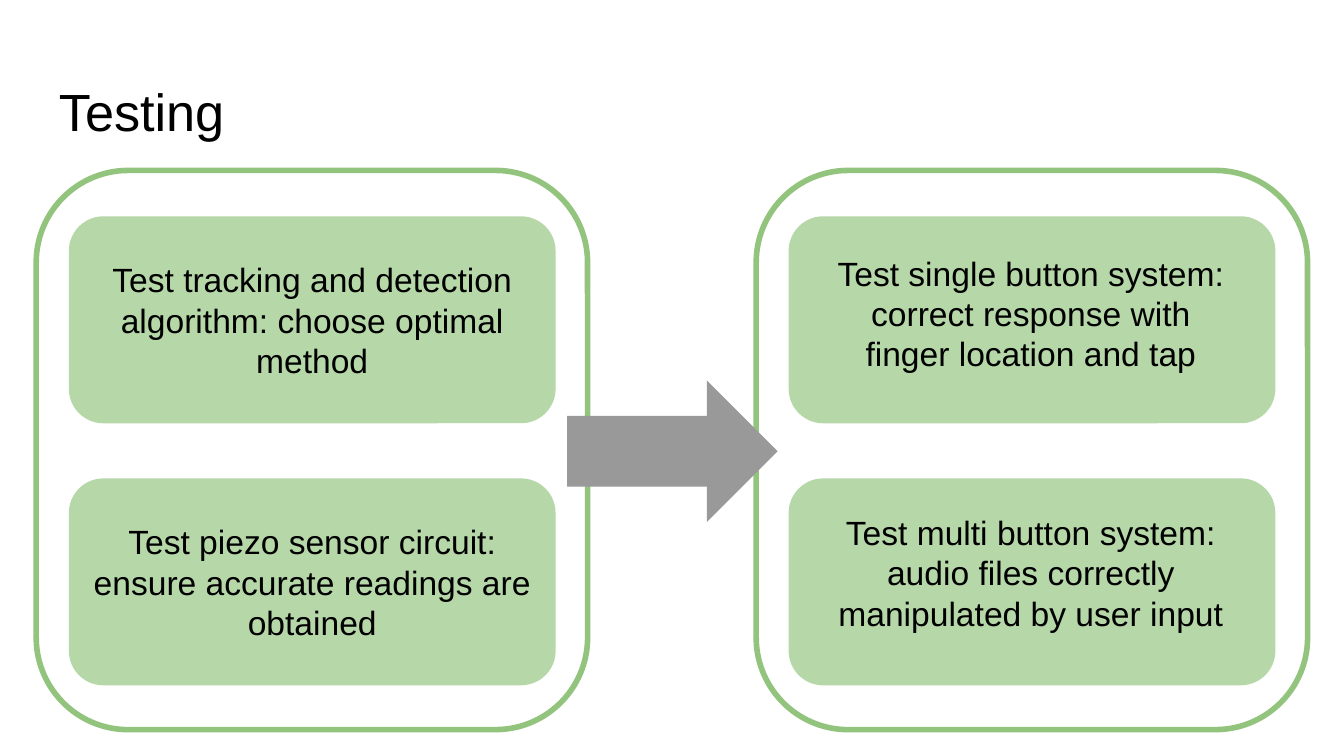
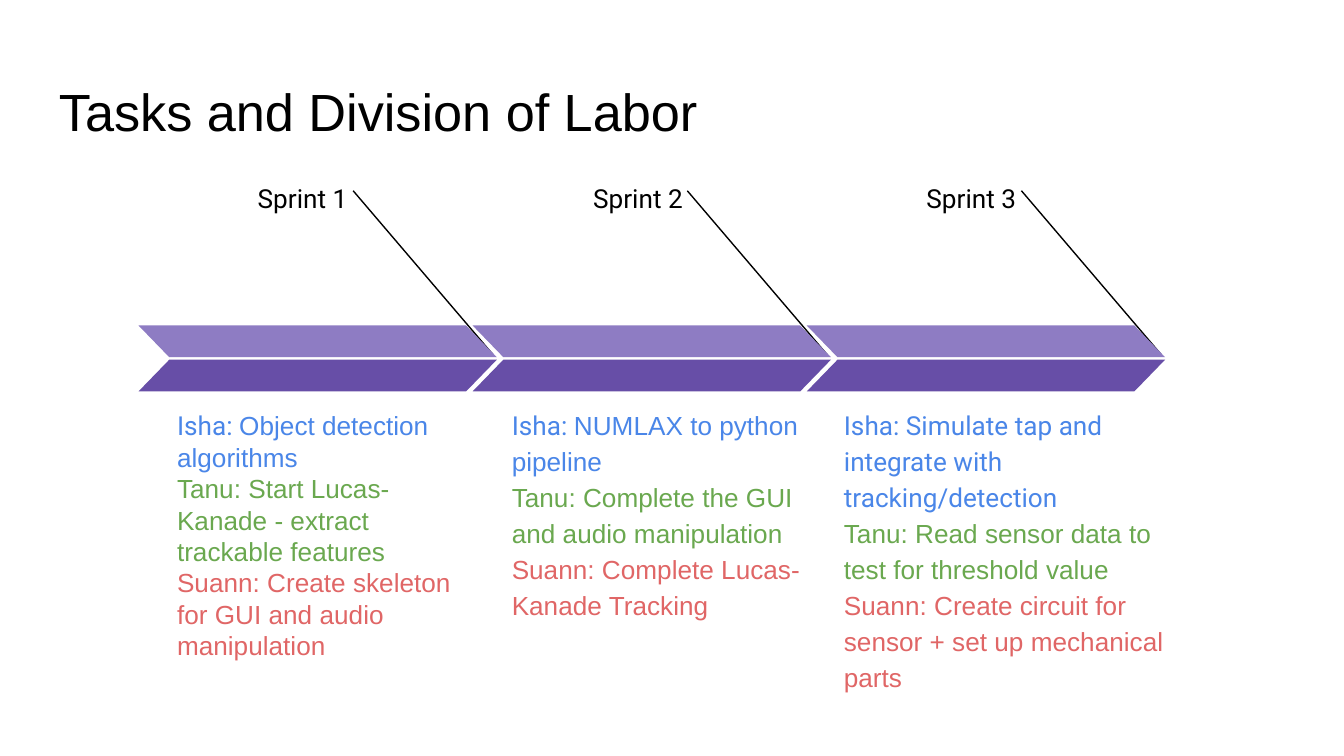
import pptx
import pptx.util
import pptx.dml.color
import pptx.enum.shapes
import pptx.enum.text
import pptx.oxml.ns
import lxml.etree

Pt = pptx.util.Pt
RGB = pptx.dml.color.RGBColor
SHAPE = pptx.enum.shapes.MSO_SHAPE
ALIGN = pptx.enum.text.PP_ALIGN
ANCHOR = pptx.enum.text.MSO_ANCHOR

BLACK = RGB(0x00, 0x00, 0x00)
GREEN = RGB(0x93, 0xC4, 0x7D)
PALE = RGB(0xB6, 0xD7, 0xA8)
GRAY = RGB(0x99, 0x99, 0x99)
LILAC = RGB(0x8E, 0x7C, 0xC3)
PURPLE = RGB(0x67, 0x4E, 0xA7)
BLUE = RGB(0x4A, 0x86, 0xE8)
LEAF = RGB(0x6A, 0xA8, 0x4F)
RED = RGB(0xE0, 0x66, 0x66)

SANS = "Arial"
ROBOTO = "Roboto"
INSET = 7.2


def write(shape, paras, size=18, font=SANS, color=BLACK, align=ALIGN.LEFT,
          anchor=ANCHOR.TOP, space=None, after=None):
    """Fill a shape with paragraphs, each a string or a list of (text, font, color)."""
    frame = shape.text_frame
    frame.word_wrap = True
    frame.vertical_anchor = anchor
    frame.margin_left = frame.margin_right = Pt(INSET)
    frame.margin_top = frame.margin_bottom = Pt(INSET)
    for i, item in enumerate(paras):
        para = frame.add_paragraph() if i else frame.paragraphs[0]
        para.alignment = align
        if space:
            para.line_spacing = space
        if after:
            para.space_after = Pt(after)
        runs = [(item, font, color)] if isinstance(item, str) else item
        for text, face, tint in runs:
            run = para.add_run()
            run.text = text
            run.font.size = Pt(size)
            run.font.name = face
            run.font.color.rgb = tint


class Deck:
    """Holds the deck's style and the slide being built."""

    def __init__(self):
        self.prs = pptx.Presentation()
        self.prs.slide_width = Pt(720)
        self.prs.slide_height = Pt(405)
        self.slide = None

    def page(self, title):
        self.slide = self.prs.slides.add_slide(self.prs.slide_layouts[6])
        self.text(24.5, 35.4, 671, 45.1, [title], size=28)

    def text(self, x, y, w, h, paras, **style):
        box = self.slide.shapes.add_textbox(Pt(x), Pt(y), Pt(w), Pt(h))
        write(box, paras, **style)

    def shape(self, kind, x, y, w, h, fill=None, line=None, adjust=(), flip=False):
        shape = self.slide.shapes.add_shape(kind, Pt(x), Pt(y), Pt(w), Pt(h))
        shape.shadow.inherit = False
        for i, value in enumerate(adjust):
            shape.adjustments[i] = value
        if fill is None:
            shape.fill.background()
        else:
            shape.fill.solid()
            shape.fill.fore_color.rgb = fill
        if line is None:
            shape.line.fill.background()
        else:
            shape.line.color.rgb = line
            shape.line.width = Pt(3)
        if flip:
            shape.element.spPr.find(pptx.oxml.ns.qn("a:xfrm")).set("flipH", "1")
        return shape

    def line(self, x1, y1, x2, y2):
        kind = pptx.enum.shapes.MSO_CONNECTOR.STRAIGHT
        line = self.slide.shapes.add_connector(kind, Pt(x1), Pt(y1), Pt(x2), Pt(y2))
        line.line.color.rgb = BLACK
        line.line.width = Pt(0.75)
        lxml.etree.SubElement(line.element.spPr, pptx.oxml.ns.qn("a:effectLst"))


def testing(deck):
    deck.page("Testing")
    round_box = SHAPE.ROUNDED_RECTANGLE
    top, pitch = 115.9, 140.4

    def panel(x):
        deck.shape(round_box, x, 91.3, 295.4, 299.6, line=GREEN, adjust=[0.167])

    def card(x, row):
        return deck.shape(round_box, x, top + row * pitch, 260.8, 110.9,
                          fill=PALE, adjust=[0.167])

    panel(19.4)
    left = ["Test tracking and detection algorithm: choose optimal method",
            "Test piezo sensor circuit: ensure accurate readings are obtained"]
    for row, text in enumerate(left):
        write(card(36.9, row), [text], align=ALIGN.CENTER, anchor=ANCHOR.MIDDLE)

    panel(405.1)
    deck.shape(SHAPE.RIGHT_ARROW, 303.8, 203.8, 112.8, 75.9, fill=GRAY, adjust=[0.5, 0.5])
    right = [
        (128.2, ["Test single button system: correct response with finger location and tap"]),
        (267.1, ["Test multi button system:", "audio files correctly manipulated by user input"]),
    ]
    for row, (y, paras) in enumerate(right):
        card(422.5, row)
        deck.text(438.5, y, 227.5, 90.7, paras, align=ALIGN.CENTER)


def tasks(deck):
    deck.page("Tasks and Division of Labor")
    # label: x, width, format; tasks: x, y, width, height, format; then the wording
    sprints = [
        ((131, 74.9, dict(after=16)), (87.8, 212.4, 170.6, 149, {}),
         [("Isha: ", ROBOTO, BLUE), ("Object detection algorithms", SANS, BLUE)],
         "Tanu: Start Lucas-Kanade - extract trackable features",
         "Suann: Create skeleton for GUI and audio manipulation"),
        ((292.3, 80.6, dict(align=ALIGN.RIGHT)), (267.1, 209.5, 169.9, 181.4, dict(space=1.15)),
         [("Isha: ", ROBOTO, BLUE), ("NUMLAX to python pipeline", SANS, BLUE)],
         "Tanu: Complete the GUI and audio manipulation",
         "Suann: Complete Lucas-Kanade Tracking"),
        ((473, 78.5, dict(align=ALIGN.RIGHT)), (445, 209.5, 187.9, 201.6, dict(space=1.15)),
         [("Isha: Simulate tap and integrate with tracking/detection", ROBOTO, BLUE)],
         "Tanu: Read sensor data to test for threshold value",
         "Suann: Create circuit for sensor + set up mechanical parts"),
    ]
    for i, (label, place, isha, tanu, suann) in enumerate(sprints):
        shift = i * 179
        x, w, style = label
        deck.text(x, 87.8, w, 28.8, [f"Sprint {i + 1}"], size=14, font=ROBOTO,
                  space=1.15, **style)
        x, y, w, h, style = place
        deck.text(x, y, w, h, [isha, [(tanu, SANS, LEAF)], [(suann, SANS, RED)]],
                  size=14, **style)
        deck.line(189.2 + shift, 102.2, 264.2 + shift, 190.1)
        for y, fill, flip in [(174.4, LILAC, True), (192.7, PURPLE, False)]:
            deck.shape(SHAPE.PARALLELOGRAM, 74.2 + shift, y, 192, 17,
                       fill=fill, adjust=[0.97], flip=flip)


def main():
    deck = Deck()
    testing(deck)
    tasks(deck)
    deck.prs.save("out.pptx")


if __name__ == "__main__":
    main()
